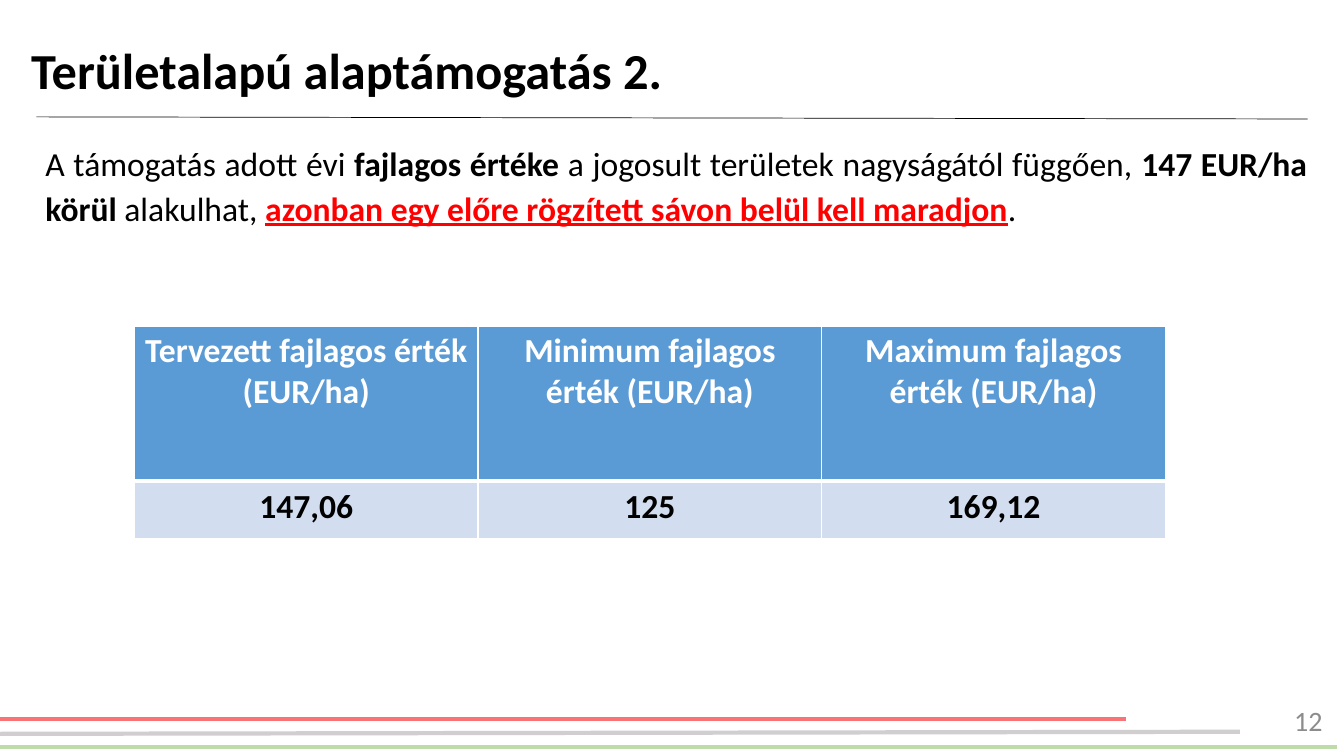
from lxml.etree import SubElement
from pptx import Presentation
from pptx.dml.color import RGBColor
from pptx.enum.shapes import MSO_CONNECTOR as Connector
from pptx.enum.text import MSO_ANCHOR as Anchor, MSO_AUTO_SIZE as AutoSize, PP_ALIGN as Align
from pptx.oxml.ns import qn
from pptx.util import Pt

BLACK, WHITE, RED = "000000", "FFFFFF", "FF0000"
HEADER_BLUE, ROW_BLUE = "5B9BD5", "D2DEEF"


def color(value):
    return RGBColor.from_string(value)


class SlideBuilder:
    font_name = "Calibri"

    def __init__(self, slide):
        self.slide = slide

    def line(self, start, end, line_color, width):
        connector = self.slide.shapes.add_connector(
            Connector.STRAIGHT, *(Pt(value) for value in start + end))
        connector.line.color.rgb = color(line_color)
        connector.line.width = Pt(width)
        SubElement(connector._element.spPr, qn("a:effectLst"))

    def runs(self, paragraph, parts, size, align):
        """Each part is text, colour, bold, underline."""
        paragraph.alignment = align
        for text, text_color, bold, underline in parts:
            run = paragraph.add_run()
            run.text = text
            font = run.font
            font.name, font.size = self.font_name, Pt(size)
            font.bold, font.underline = bold, underline
            font.color.rgb = color(text_color)

    def text(self, shape, box, parts, size, align, anchor, spacing=1.0, after=0):
        shape.left, shape.top, shape.width, shape.height = (Pt(value) for value in box)
        frame = shape.text_frame
        frame.word_wrap = True
        frame.auto_size = AutoSize.NONE
        frame.vertical_anchor = anchor
        paragraph = frame.paragraphs[0]
        properties = paragraph._p.get_or_add_pPr()
        properties.set("marL", "0")
        properties.set("indent", "0")
        SubElement(properties, qn("a:buNone"))
        paragraph.line_spacing = spacing
        paragraph.space_before, paragraph.space_after = Pt(0), Pt(after)
        self.runs(paragraph, parts, size, align)

    def text_box(self, box, *style):
        shape = self.slide.shapes.add_textbox(*(Pt(value) for value in box))
        self.text(shape, box, *style)

    def cell_borders(self, cell, widths):
        properties = cell._tc.get_or_add_tcPr()
        for side, width in widths.items():
            border = SubElement(properties, qn(f"a:ln{side}"), w=str(Pt(width)))
            fill = SubElement(border, qn("a:solidFill"))
            SubElement(fill, qn("a:srgbClr"), val=WHITE)

    def table(self, left, top, column_width, row_heights, rows, row_styles, size):
        columns = len(rows[0])
        table = self.slide.shapes.add_table(
            len(rows), columns, Pt(left), Pt(top),
            Pt(column_width * columns), Pt(sum(row_heights))).table
        for column in table.columns:
            column.width = Pt(column_width)
        for row, height, texts, style in zip(table.rows, row_heights, rows, row_styles):
            row.height = Pt(height)
            fill_color, text_color, top_width, bottom_width = style
            for cell, text in zip(row.cells, texts):
                self.cell_borders(cell, {"L": 1, "R": 1, "T": top_width, "B": bottom_width})
                cell.fill.solid()
                cell.fill.fore_color.rgb = color(fill_color)
                self.runs(cell.text_frame.paragraphs[0],
                          [(text, text_color, True, False)], size, Align.CENTER)


def main():
    presentation = Presentation()
    presentation.slide_width, presentation.slide_height = Pt(960), Pt(540)
    slide = presentation.slides.add_slide(presentation.slide_layouts[1])
    builder = SlideBuilder(slide)

    # Footer stripes and title rule
    builder.line((0, 513.4), (804, 513.4), "F97376", 3)
    builder.line((0, 533.5), (955, 533.5), "BEDCAA", 3)
    builder.line((0, 524.2), (885.6, 522.7), "D0CECE", 3)
    builder.line((26, 83.5), (934, 85), BLACK, 0.5)

    # Title and body
    title, body = slide.placeholders
    builder.text(title, (15, 0, 936, 104.4),
                 [("Területalapú alaptámogatás 2.", BLACK, True, False)],
                 36, Align.LEFT, Anchor.MIDDLE, 0.9)
    builder.text(body, (25.2, 95.8, 915.8, 389.5), [
        ("A támogatás adott évi ", BLACK, False, False),
        ("fajlagos értéke ", BLACK, True, False),
        ("a jogosult területek nagyságától függően, ", BLACK, False, False),
        ("147 EUR/ha körül", BLACK, True, False),
        (" alakulhat, ", BLACK, False, False),
        ("azonban egy előre rögzített sávon belül kell maradjon", RED, True, True),
        (".", BLACK, False, False),
    ], 24, Align.JUSTIFY, Anchor.TOP, 1.1, 3)

    # Slide number
    builder.text_box((735.8, 500.4, 216, 28.8), [("12", "8C8C8C", False, False)],
                     20, Align.RIGHT, Anchor.MIDDLE)

    # Table of unit values
    builder.table(96, 232.8, 245.5, (110.9, 41), [
        [f"{kind} fajlagos érték (EUR/ha)" for kind in ("Tervezett", "Minimum", "Maximum")],
        ["147,06", "125", "169,12"],
    ], [(HEADER_BLUE, WHITE, 1, 3), (ROW_BLUE, BLACK, 3, 1)], 24)

    presentation.save("out.pptx")


if __name__ == "__main__":
    main()
